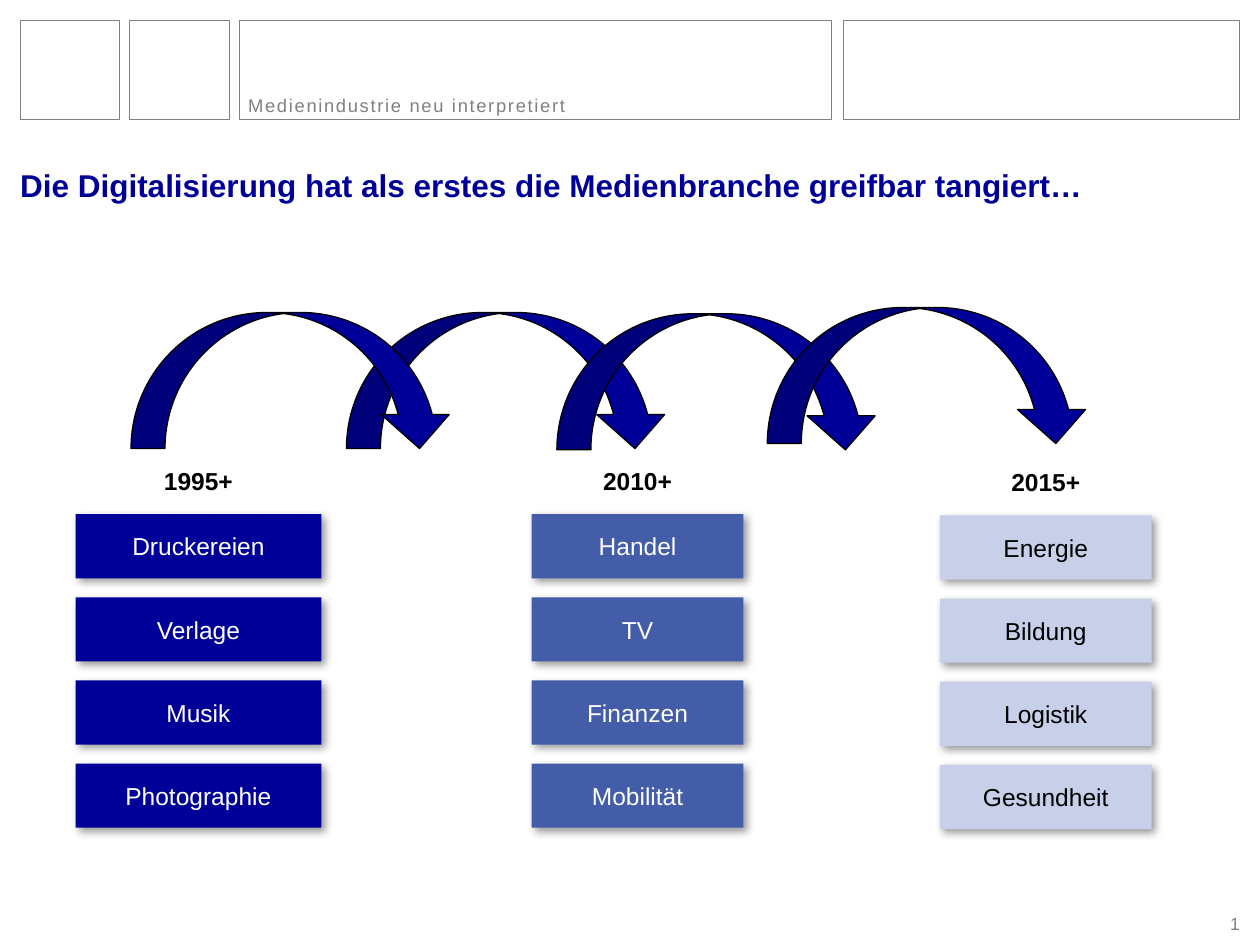
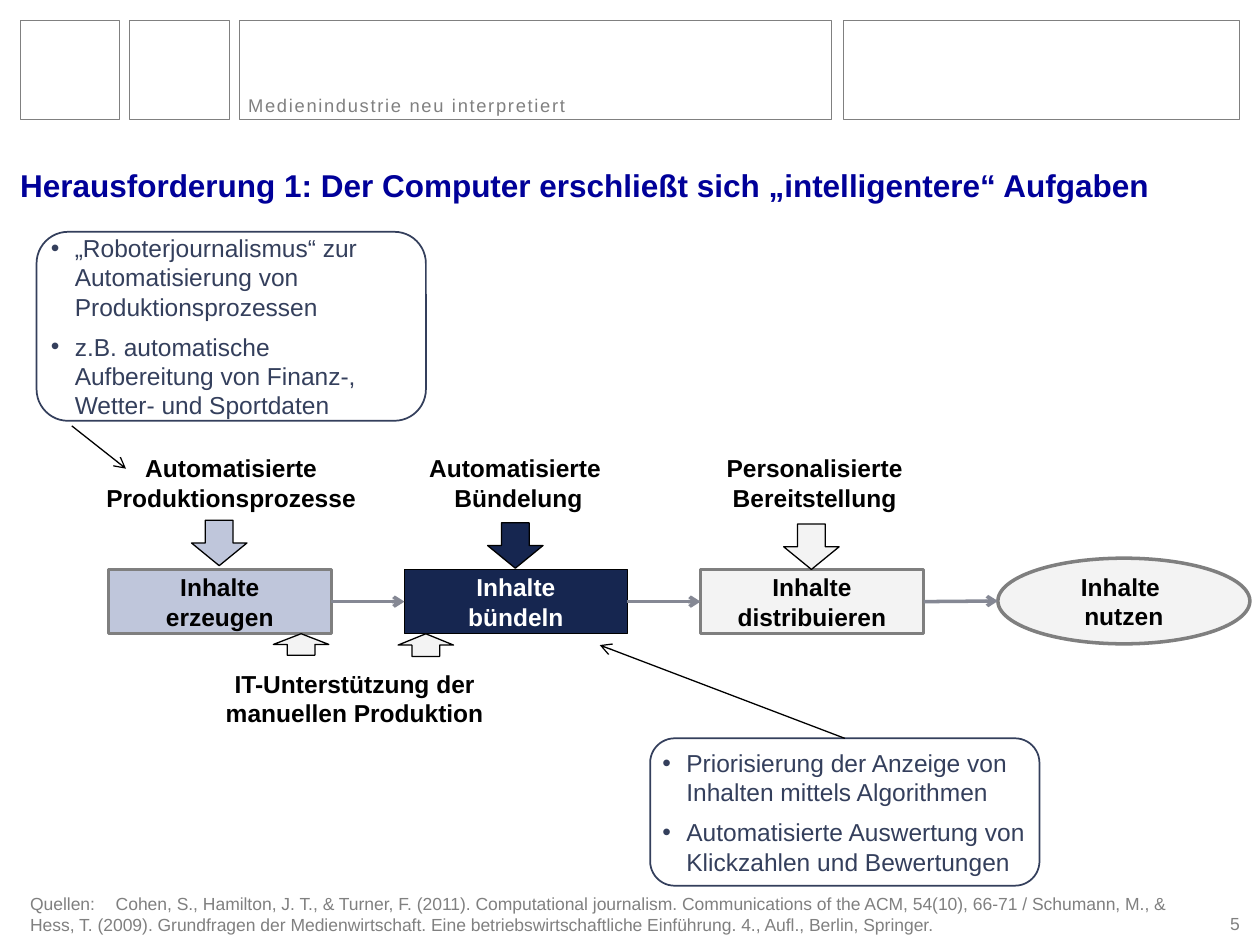
from lxml import etree
from pptx import Presentation
from pptx.dml.color import RGBColor
from pptx.enum.shapes import MSO_CONNECTOR, MSO_SHAPE
from pptx.enum.text import MSO_ANCHOR, PP_ALIGN
from pptx.oxml.ns import qn
from pptx.util import Inches, Pt

RECT, ROUND_RECT, OVAL = MSO_SHAPE.RECTANGLE, MSO_SHAPE.ROUNDED_RECTANGLE, MSO_SHAPE.OVAL
DOWN_ARROW, UP_ARROW = MSO_SHAPE.DOWN_ARROW, MSO_SHAPE.UP_ARROW
CURVED_ARROW = MSO_SHAPE.CURVED_DOWN_ARROW
STRAIGHT = MSO_CONNECTOR.STRAIGHT
LEFT, CENTER, RIGHT = PP_ALIGN.LEFT, PP_ALIGN.CENTER, PP_ALIGN.RIGHT
TOP, MIDDLE, BOTTOM = MSO_ANCHOR.TOP, MSO_ANCHOR.MIDDLE, MSO_ANCHOR.BOTTOM

FONT = "Arial"
BLACK, WHITE, GRAY = "000000", "FFFFFF", "808080"
BLUE, MID_BLUE, PALE_BLUE = "000099", "435DA8", "C7CFE9"
NAVY, LAVENDER, LIGHT = "162650", "BFC6DB", "F3F3F3"
SLATE, FLOW_GRAY, FRAME_GRAY = "343F5C", "858894", "7F7F7F"
DEFAULT_INSETS = (0.1, 0.05, 0.1, 0.05)
NO_INSETS = (0, 0, 0, 0)
STAGE_INSETS = (0.04, 0.04, 0.04, 0.04)
CALLOUT_INSETS = (0.04, 0.02, 0.04, 0.02)


def rgb(color):
    return RGBColor.from_string(color)


def box_of(at):
    return [Inches(v) for v in at]


def write(shape, paragraphs, size=14, color=BLACK, bold=False, align=CENTER,
          anchor=MIDDLE, insets=DEFAULT_INSETS):
    tf = shape.text_frame
    tf.word_wrap = True
    tf.vertical_anchor = anchor
    tf.margin_left, tf.margin_top, tf.margin_right, tf.margin_bottom = box_of(insets)
    for i, text in enumerate(paragraphs):
        p = tf.add_paragraph() if i else tf.paragraphs[0]
        p.alignment = align
        for j, line in enumerate(text.split("\n")):
            if j:
                p.add_line_break()
            r = p.add_run()
            r.text = line
            r.font.name, r.font.size, r.font.bold = FONT, Pt(size), bold
            r.font.color.rgb = rgb(color)
    return tf


def add_text(s, at, paragraphs, **style):
    return write(s.shapes.add_textbox(*box_of(at)), paragraphs, **style)


def add_shape(s, kind, at, fill=None, line=None, width=0.75):
    sp = s.shapes.add_shape(kind, *box_of(at))
    sp.shadow.inherit = False
    if fill:
        sp.fill.solid()
        sp.fill.fore_color.rgb = rgb(fill)
    else:
        sp.fill.background()
    if line:
        sp.line.color.rgb = rgb(line)
        sp.line.width = Pt(width)
    else:
        sp.line.fill.background()
    return sp


def add_drop_shadow(sp):
    effects = sp.element.spPr.find(qn("a:effectLst"))
    shadow = etree.SubElement(effects, qn("a:outerShdw"), blurRad=str(Pt(5)),
                              dist=str(Pt(3)), dir="2700000", algn="tl", rotWithShape="0")
    color = etree.SubElement(shadow, qn("a:srgbClr"), val=BLACK)
    etree.SubElement(color, qn("a:alpha"), val="40000")


def add_arrow(s, start, end, color=BLACK, width=0.75):
    c = s.shapes.add_connector(STRAIGHT, *box_of(start + end))
    c.line.color.rgb = rgb(color)
    c.line.width = Pt(width)
    etree.SubElement(c.line._get_or_add_ln(), qn("a:tailEnd"), type="arrow")
    etree.SubElement(c.element.spPr, qn("a:effectLst"))
    return c


def add_callout(s, at, points):
    sp = add_shape(s, ROUND_RECT, at, WHITE, SLATE, 1)
    tf = write(sp, points, color=SLATE, align=LEFT, insets=CALLOUT_INSETS)
    for p in tf.paragraphs:
        p.space_after = Pt(6)
        pPr = p._p.get_or_add_pPr()
        pPr.set("marL", str(Inches(0.19)))
        pPr.set("indent", str(Inches(-0.19)))
        etree.SubElement(pPr, qn("a:buFont"), typeface=FONT)
        etree.SubElement(pPr, qn("a:buChar"), char="•")
    return sp


def add_industry_column(s, left, top, width, year, industries, fill, color):
    add_text(s, (left + width / 2 - 0.74, top - 0.43, 1.48, 0.34), [year],
             bold=True, anchor=TOP)
    for i, industry in enumerate(industries):
        sp = add_shape(s, RECT, (left, top + 0.66 * i, width, 0.51), fill)
        add_drop_shadow(sp)
        write(sp, [industry], color=color)


def add_base_slide(prs, title, number):
    s = prs.slides.add_slide(prs.slide_layouts[6])
    for left, width in ((0.16, 0.79), (1.03, 0.79), (1.9, 4.7), (6.69, 3.15)):
        add_shape(s, RECT, (left, 0.16, width, 0.79), line=GRAY, width=0.5)
    tf = add_text(s, (1.97, 0.57, 4.59, 0.36), ["Medienindustrie neu interpretiert"],
                  size=10.5, color=GRAY, align=LEFT, anchor=BOTTOM, insets=NO_INSETS)
    p = tf.paragraphs[0]
    p.line_spacing = 0.95
    p.runs[0].font._element.set("spc", "100")
    add_text(s, (0.16, 1.04, 9.68, 0.58), [title], size=18, color=BLUE, bold=True,
             align=LEFT, anchor=BOTTOM, insets=NO_INSETS)
    add_text(s, (9.56, 7.24, 0.28, 0.17), [number], size=10, color=GRAY,
             align=RIGHT, anchor=BOTTOM, insets=NO_INSETS)
    return s


def build_industries(prs):
    s = add_base_slide(
        prs, "Die Digitalisierung hat als erstes die Medienbranche greifbar tangiert…", "1")
    for left, top in ((2.75, 2.48), (1.04, 2.48), (4.42, 2.49), (6.09, 2.44)):
        add_shape(s, CURVED_ARROW, (left, top, 2.56, 1.08), BLUE, BLACK)
    add_industry_column(s, 0.6, 4.08, 1.95, "1995+",
                        ["Druckereien", "Verlage", "Musik", "Photographie"], BLUE, WHITE)
    add_industry_column(s, 4.22, 4.08, 1.68, "2010+",
                        ["Handel", "TV", "Finanzen", "Mobilität"], MID_BLUE, WHITE)
    add_industry_column(s, 7.46, 4.09, 1.68, "2015+",
                        ["Energie", "Bildung", "Logistik", "Gesundheit"], PALE_BLUE, BLACK)


def add_value_chain(s):
    stages = (
        ("Inhalte\nerzeugen", LAVENDER, FRAME_GRAY, 2, BLACK, 4.13),
        ("Inhalte\nbündeln", NAVY, BLACK, 0.75, WHITE, 4.15),
        ("Inhalte distribuieren", LIGHT, FRAME_GRAY, 2, BLACK, 4.16),
    )
    pitch, width, middle = 2.35, 1.77, 4.77
    boxes = []
    for i, (text, fill, line, weight, color, arrow_top) in enumerate(stages):
        left = 0.86 + pitch * i
        sp = add_shape(s, RECT, (left, 4.52, width, 0.51), fill, line, weight)
        write(sp, [text], color=color, bold=True, insets=STAGE_INSETS)
        add_shape(s, DOWN_ARROW, (left + 0.66, arrow_top, 0.44, 0.36), fill, BLACK)
        boxes.append(sp)
    usage = add_shape(s, OVAL, (7.92, 4.43, 2, 0.68), LIGHT, FRAME_GRAY, 2)
    write(usage, ["Inhalte \nnutzen"], bold=True, insets=STAGE_INSETS)
    for i, stage in enumerate(boxes):
        right = 0.86 + pitch * i + width
        c = add_arrow(s, (right, middle), (7.92, middle), FLOW_GRAY, 2)
        c.begin_connect(stage, 3)
        if i + 1 < len(boxes):
            c.end_connect(boxes[i + 1], 1)


def build_challenge(prs):
    s = add_base_slide(
        prs, "Herausforderung 1: Der Computer erschließt sich „intelligentere“ Aufgaben", "5")
    add_value_chain(s)
    for left, top, lines in (
        (0.46, 3.55, ["Automatisierte Produktionsprozesse"]),
        (2.74, 3.55, ["Automatisierte ", "Bündelung"]),
        (5.09, 3.55, ["Personalisierte", "Bereitstellung"]),
        (1.44, 5.26, ["IT-Unterstützung der manuellen Produktion"]),
    ):
        add_text(s, (left, top, 2.75, 0.57), lines, bold=True, anchor=TOP)
    for left, height in ((2.17, 0.17), (3.16, 0.18)):
        add_shape(s, UP_ARROW, (left, 5.03, 0.44, height), LIGHT, BLACK)

    add_callout(s, (0.29, 1.84, 3.09, 1.5), [
        "„Roboterjournalismus“ zur Automatisierung von Produktionsprozessen",
        "z.B. automatische Aufbereitung von Finanz-, Wetter- und Sportdaten"])
    add_arrow(s, (0.57, 3.38), (1, 3.72))
    ranking = add_callout(s, (5.16, 5.86, 3.09, 1.17), [
        "Priorisierung der Anzeige von Inhalten mittels Algorithmen",
        "Automatisierte Auswertung von Klickzahlen und Bewertungen"])
    add_arrow(s, (6.71, 5.86), (4.76, 5.12)).begin_connect(ranking, 0)

    tf = add_text(s, (0.14, 7.04, 9.41, 0.44), [
        "Quellen: \tCohen, S., Hamilton, J. T., & Turner, F. (2011). Computational journalism. "
        "Communications of the ACM, 54(10), 66-71 / Schumann, M., & Hess, T. (2009). "
        "Grundfragen der Medienwirtschaft. Eine betriebswirtschaftliche Einführung. "
        "4., Aufl., Berlin, Springer."], size=10, color=GRAY, align=LEFT, anchor=TOP)
    tabs = etree.SubElement(tf.paragraphs[0]._p.get_or_add_pPr(), qn("a:tabLst"))
    etree.SubElement(tabs, qn("a:tab"), pos=str(Inches(0.68)), algn="l")


def main():
    prs = Presentation()
    prs.slide_width, prs.slide_height = Inches(10), Inches(7.5)
    build_industries(prs)
    build_challenge(prs)
    prs.save("out.pptx")


if __name__ == "__main__":
    main()
